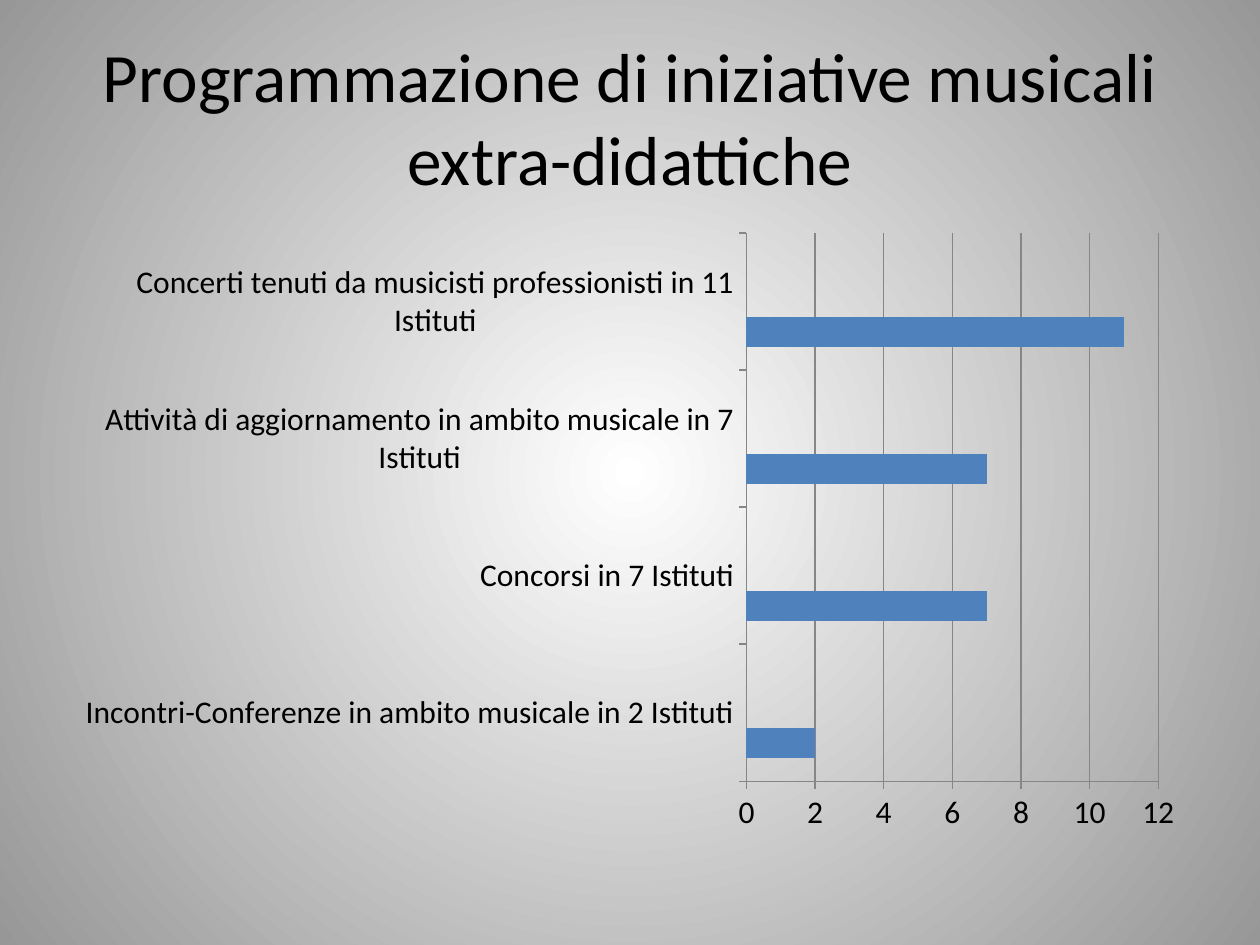
"""Build a slide with a bar chart of extra-curricular music initiatives."""
from lxml import etree
from pptx import Presentation
from pptx.chart.data import CategoryChartData
from pptx.dml.color import RGBColor
from pptx.enum.chart import XL_CHART_TYPE, XL_TICK_MARK
from pptx.enum.text import MSO_ANCHOR, MSO_AUTO_SIZE, PP_ALIGN
from pptx.oxml.ns import qn
from pptx.util import Inches, Pt

BAR = XL_CHART_TYPE.BAR_CLUSTERED
OUTSIDE = XL_TICK_MARK.OUTSIDE
MIDDLE = MSO_ANCHOR.MIDDLE
NO_FIT = MSO_AUTO_SIZE.NONE
CENTER = PP_ALIGN.CENTER

TITLE = "Programmazione di iniziative musicali extra-didattiche"
INITIATIVES = [
    ("Incontri-Conferenze in ambito musicale in 2 Istituti", 2),
    ("Concorsi in 7 Istituti", 7),
    ("Attività di aggiornamento in ambito musicale in 7 Istituti", 7),
    ("Concerti tenuti da musicisti professionisti in 11 Istituti", 11),
]
COLORS = {"text": "000000", "line": "868686", "center": "FFFFFF", "edge": "979797"}
SERIES_COLORS = {"Series 1": "4F81BD", "Series 2": "C0504D", "Series 3": "9BBB59"}
FONT = "Calibri"
WIDTH, HEIGHT = Inches(10), Inches(7.5)
MARGIN = Inches(0.5)
CONTENT_WIDTH = WIDTH - 2 * MARGIN


def rgb(name):
    return RGBColor.from_string(COLORS[name])


def style_font(font, size):
    font.name, font.size = FONT, Pt(size)
    font.color.rgb = rgb("text")


def paint_background(page):
    fill = page.background.fill
    fill.gradient()
    for stop, position, name in zip(fill.gradient_stops, (0, 1), ("center", "edge")):
        stop.position, stop.color.rgb = position, rgb(name)
    gradient = page.background._cSld.find(".//" + qn("a:gradFill"))
    gradient.remove(gradient.find(qn("a:lin")))
    circle = etree.Element(qn("a:path"), path="circle")
    etree.SubElement(circle, qn("a:fillToRect"), dict.fromkeys("ltrb", "50000"))
    gradient.find(qn("a:gsLst")).addnext(circle)


def write_title(title, text, size):
    title.left, title.top = MARGIN, Inches(0.3)
    title.width, title.height = CONTENT_WIDTH, Inches(1.25)
    frame = title.text_frame
    frame.text = text
    frame.word_wrap, frame.auto_size = True, NO_FIT
    frame.vertical_anchor = MIDDLE
    para = frame.paragraphs[0]
    para.alignment = CENTER
    style_font(para.runs[0].font, size)


def add_bar_chart(page):
    labels, values = zip(*INITIATIVES)
    data = CategoryChartData()
    data.categories = labels
    for index, name in enumerate(SERIES_COLORS):
        data.add_series(name, values if index == 0 else [None] * len(values))
    chart = page.shapes.add_chart(
        BAR, MARGIN, Inches(1.75), CONTENT_WIDTH, Inches(4.95), data
    ).chart
    chart.has_legend = chart.has_title = False
    style_font(chart.font, 18)
    plot = chart.plots[0]
    plot.gap_width, plot.vary_by_categories = 150, False
    for series in plot.series:
        series.format.fill.solid()
        series.format.fill.fore_color.rgb = RGBColor.from_string(SERIES_COLORS[series.name])
    for axis in (chart.category_axis, chart.value_axis):
        axis.major_tick_mark = OUTSIDE
        axis.format.line.color.rgb = rgb("line")
    chart.value_axis.has_major_gridlines = True
    chart.value_axis.major_gridlines.format.line.color.rgb = rgb("line")


def main():
    deck = Presentation()
    deck.slide_width, deck.slide_height = WIDTH, HEIGHT
    page = deck.slides.add_slide(deck.slide_layouts.get_by_name("Title Only"))
    paint_background(page)
    write_title(page.shapes.title, TITLE, 39.6)
    add_bar_chart(page)
    deck.save("out.pptx")


if __name__ == "__main__":
    main()
